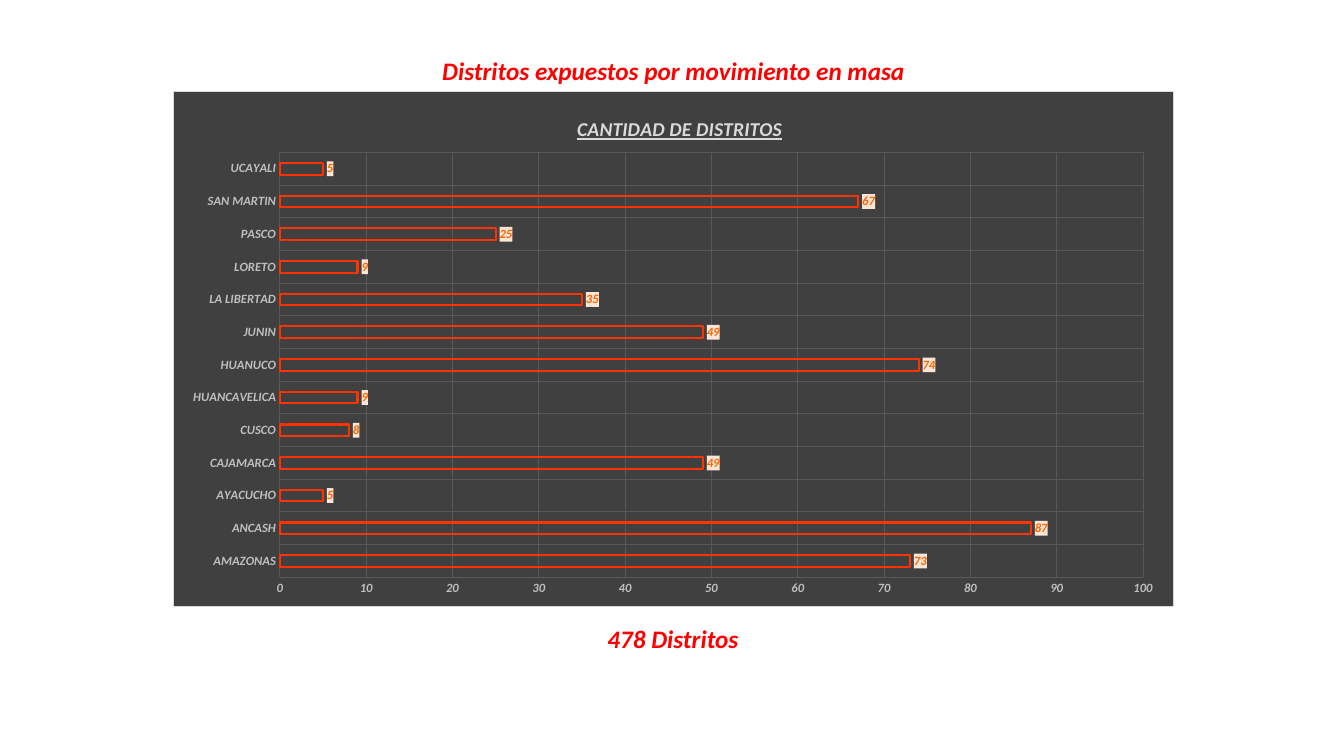
from lxml import etree
from pptx import Presentation
from pptx import util as u
from pptx.chart.data import CategoryChartData
from pptx.dml.color import RGBColor
from pptx.enum import chart as ch, text
from pptx.oxml import parse_xml
from pptx.oxml.ns import nsdecls, qn

COLORS = {"heading": "FF0000", "panel": "404040", "border": "D9D9D9", "grid": "595959",
          "axis": "BFBFBF", "title": "D9D9D9", "bar": "FF3300", "label": "FF6600",
          "label_fill": "FBE5D6"}
FONT = "Calibri"
DISTRICTS = {"AMAZONAS": 73, "ANCASH": 87, "AYACUCHO": 5, "CAJAMARCA": 49, "CUSCO": 8,
             "HUANCAVELICA": 9, "HUANUCO": 74, "JUNIN": 49, "LA LIBERTAD": 35,
             "LORETO": 9, "PASCO": 25, "SAN MARTIN": 67, "UCAYALI": 5}


def style_font(font, size, color):
    font.name, font.size = FONT, u.Pt(size)
    font.bold = font.italic = True
    font.color.rgb = RGBColor.from_string(COLORS[color])


def place(element, index, **shares):
    """Set a manual layout, in shares of the chart's size."""
    for old in element.findall(qn("c:layout")):
        element.remove(old)
    layout = parse_xml(f'<c:layout {nsdecls("c")}><c:manualLayout/></c:layout>')
    if "w" in shares:
        etree.SubElement(layout[0], qn("c:layoutTarget")).set("val", "inner")
    for mode in ("xMode", "yMode"):
        etree.SubElement(layout[0], qn(f"c:{mode}")).set("val", "edge")
    for name, share in shares.items():
        etree.SubElement(layout[0], qn(f"c:{name}")).set("val", str(share))
    element.insert(index, layout)


deck = Presentation()
deck.slide_width, deck.slide_height = u.Inches(13.33), u.Inches(7.5)
page = deck.slides.add_slide(deck.slide_layouts[6])

# Chart data and frame
data = CategoryChartData(number_format="#,##0")
data.categories = list(DISTRICTS)
data.add_series("Series 1", list(DISTRICTS.values()))
chart = page.shapes.add_chart(ch.XL_CHART_TYPE.BAR_CLUSTERED, u.Inches(1.72), u.Inches(0.9),
                              u.Inches(9.92), u.Inches(5.12), data).chart
chart.has_legend = False
chart.font.name, chart.font.size = FONT, u.Pt(10)

# Dark panel with a thin border and square corners
space = chart._chartSpace
space.find(qn("c:chart")).addnext(parse_xml(
    f'<c:spPr {nsdecls("c", "a")}><a:solidFill><a:srgbClr val="{COLORS["panel"]}"/></a:solidFill>'
    f'<a:ln w="9525"><a:solidFill><a:srgbClr val="{COLORS["border"]}"/></a:solidFill></a:ln></c:spPr>'))
if space.find(qn("c:roundedCorners")) is None:
    space.find(qn("c:date1904")).addnext(
        parse_xml(f'<c:roundedCorners {nsdecls("c")} val="0"/>'))

# Chart title
chart.has_title = True
span = chart.chart_title.text_frame.paragraphs[0].add_run()
span.text = "CANTIDAD DE DISTRITOS"
style_font(span.font, 14, "title")
span.font.underline = True
place(chart.chart_title._element, 1, x=0.4, y=0.04)
place(space.find(qn("c:chart")).find(qn("c:plotArea")), 0, x=0.106, y=0.119, w=0.864, h=0.825)

# Axes
for axis in (chart.category_axis, chart.value_axis):
    axis.major_tick_mark = axis.minor_tick_mark = ch.XL_TICK_MARK.NONE
    axis.format.line.fill.background()
    axis.has_major_gridlines = True
    grid = axis.major_gridlines.format.line
    grid.width = u.Pt(0.75)
    grid.color.rgb = RGBColor.from_string(COLORS["grid"])
    style_font(axis.tick_labels.font, 9, "axis")
chart.value_axis.minimum_scale, chart.value_axis.maximum_scale = 0, 100
chart.value_axis.major_unit = 10

# Hollow bars
plot = chart.plots[0]
plot.gap_width, plot.overlap, plot.vary_by_categories = 182, -50, False
bars = plot.series[0]
bars.format.fill.background()
bars.format.line.width = u.Pt(1.5)
bars.format.line.color.rgb = RGBColor.from_string(COLORS["bar"])

# Value labels on a pale ground
labels = bars.data_labels
labels.show_value = True
labels.position = ch.XL_LABEL_POSITION.OUTSIDE_END
labels.number_format, labels.number_format_is_linked = "#,##0", False
style_font(labels.font, 9, "label")
labels._element.find(qn("c:txPr")).addprevious(parse_xml(
    f'<c:spPr {nsdecls("c", "a")}><a:solidFill><a:srgbClr val="{COLORS["label_fill"]}"/>'
    '</a:solidFill></c:spPr>'))

# Heading above and total below
for words, left, top, width, wrap in (
        ("Distritos expuestos por movimiento en masa", 4.26, 0.5, 4.84, False),
        ("478 Distritos", 5.84, 6.13, 1.67, True)):
    box = page.shapes.add_textbox(*map(u.Inches, (left, top, width, 0.4)))
    box.text_frame.word_wrap = wrap
    box.text_frame.auto_size = text.MSO_AUTO_SIZE.SHAPE_TO_FIT_TEXT
    para = box.text_frame.paragraphs[0]
    para.alignment = text.PP_ALIGN.CENTER
    span = para.add_run()
    span.text = words
    style_font(span.font, 18, "heading")

deck.save("out.pptx")
